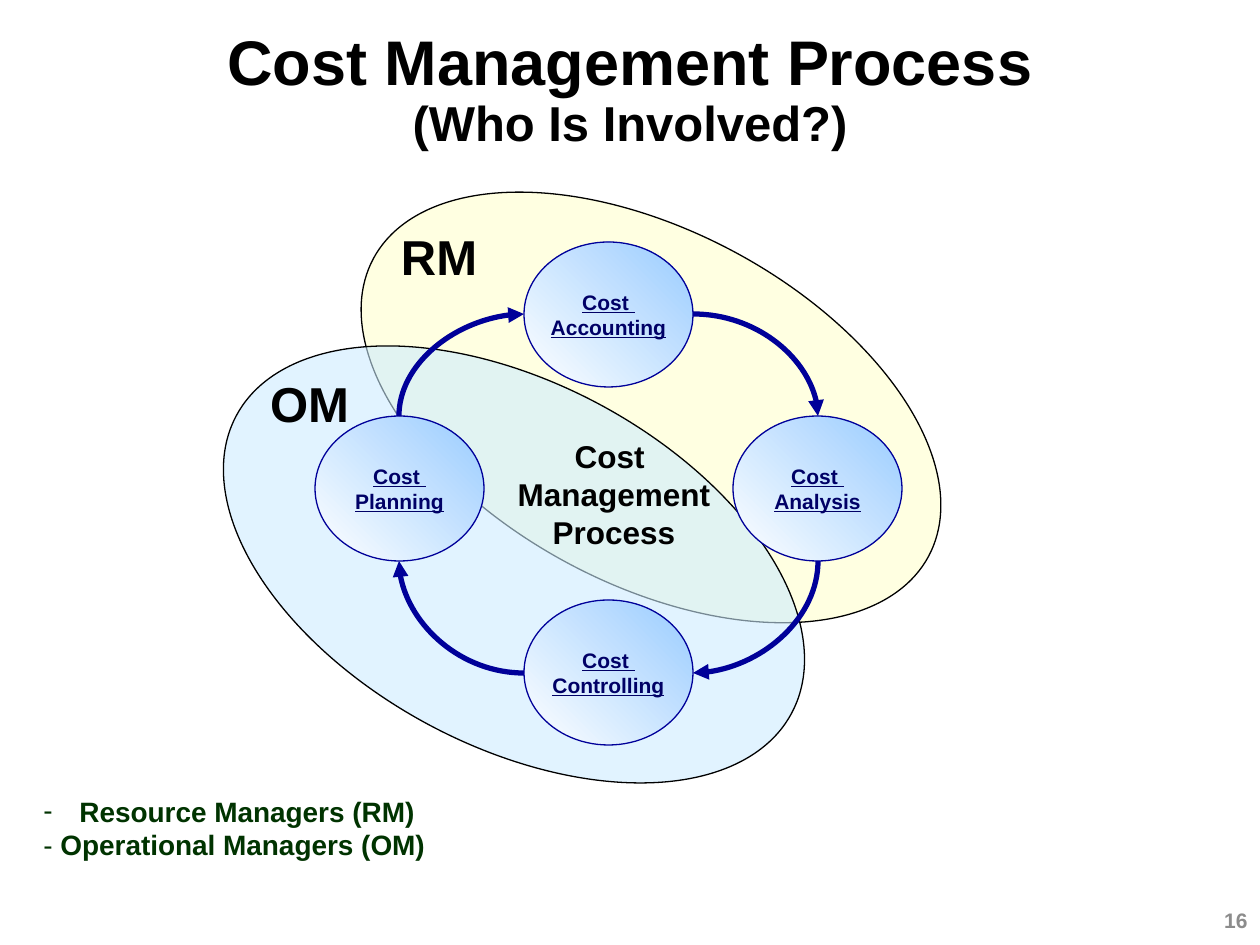
from dataclasses import dataclass

from lxml.etree import SubElement
from pptx import Presentation
from pptx.dml.color import RGBColor
from pptx.enum.shapes import MSO_CONNECTOR, MSO_SHAPE
from pptx.enum.text import MSO_ANCHOR as Anchor, MSO_AUTO_SIZE as AutoSize, PP_ALIGN as Align
from pptx.oxml.ns import qn
from pptx.util import Pt

EMU_PER_PX = 914400 / 126


@dataclass(frozen=True)
class Theme:
    font: str = "Arial"
    black: str = "000000"
    rm_fill: str = "FFFFCC"
    om_fill: str = "CCECFF"
    step_from: str = "FFFFFF"
    step_to: str = "99CCFF"
    cycle_line: str = "000099"
    step_text: str = "000066"
    legend_text: str = "003300"
    page_text: str = "8C8C8C"
    title: int = 36
    heading: int = 28
    hub: int = 18
    legend: int = 16
    small: int = 12


theme = Theme()


def px(*lengths):
    """Convert px lengths to a list of EMU."""
    return [round(length * EMU_PER_PX) for length in lengths]


def add_run(paragraph, text, size, color, bold=True, underline=None):
    run = paragraph.add_run()
    run.text = text
    font = run.font
    font.name, font.size, font.bold, font.underline = theme.font, Pt(size), bold, underline
    font.color.rgb = RGBColor.from_string(color)


prs = Presentation()
prs.slide_width, prs.slide_height = px(1260, 945)
slide = prs.slides.add_slide(prs.slide_layouts[5])
shapes = slide.shapes

# Title
title = shapes.title
title.left, title.top, title.width, title.height = px(168, 31, 924, 78)
frame = title.text_frame
frame.word_wrap = True
frame.auto_size = AutoSize.NONE
frame.vertical_anchor = Anchor.TOP
frame.margin_top = frame.margin_bottom = 0
heading = frame.paragraphs[0]
heading.alignment = Align.CENTER
heading.line_spacing = 0.9
add_run(heading, "Cost Management Process", theme.title, theme.black)
heading.add_line_break()
add_run(heading, "(Who Is Involved?)", theme.heading, theme.black)

# Overlapping areas of responsibility
areas = [
    ("RM", theme.rm_fill, (336, 231, 630, 353), (388, 220, 102, 72)),
    ("OM", theme.om_fill, (199, 383, 630, 363), (257, 367, 105, 72)),
]
for role, color, area_box, role_box in areas:
    area = shapes.add_shape(MSO_SHAPE.OVAL, *px(*area_box))
    area.rotation = 28.2
    area.shadow.inherit = False
    area.fill.solid()
    area.fill.fore_color.rgb = RGBColor.from_string(color)
    area_color = area.fill._xPr.find(qn("a:solidFill"))[0]
    SubElement(area_color, qn("a:alpha"), val="58000")
    area.line.color.rgb = RGBColor.from_string(theme.black)
    area.line.width = Pt(0.75)

    frame = shapes.add_textbox(*px(*role_box)).text_frame
    frame.word_wrap = False
    frame.auto_size = AutoSize.SHAPE_TO_FIT_TEXT
    frame.paragraphs[0].alignment = Align.CENTER
    add_run(frame.paragraphs[0], role, theme.heading, theme.black)

# Legend
frame = shapes.add_textbox(*px(31, 788, 408, 81)).text_frame
frame.word_wrap = False
frame.auto_size = AutoSize.SHAPE_TO_FIT_TEXT
resource, operational = frame.paragraphs[0], frame.add_paragraph()
bullet_props = resource._p.get_or_add_pPr()
indent = px(36)[0]
bullet_props.set("marL", str(indent))
bullet_props.set("indent", str(-indent))
SubElement(bullet_props, qn("a:buFont"), typeface=theme.font)
SubElement(bullet_props, qn("a:buChar"), char="-")
add_run(resource, "Resource Managers (RM)", theme.legend, theme.legend_text)
add_run(operational, "- ", theme.legend, theme.legend_text, bold=False)
add_run(operational, "Operational Managers (OM)", theme.legend, theme.legend_text)

# Steps of the cycle
STEP_W, STEP_H = 169, 145
steps = [
    ("Planning", 315, 416),
    ("Controlling", 524, 600),
    ("Analysis", 733, 416),
    ("Accounting", 524, 242),
]
for name, left, top in steps:
    step = shapes.add_shape(MSO_SHAPE.OVAL, *px(left, top, STEP_W, STEP_H))
    step.shadow.inherit = False
    step.fill.gradient()
    step.fill.gradient_angle = 45
    for stop, color in zip(step.fill.gradient_stops, (theme.step_from, theme.step_to)):
        stop.color.rgb = RGBColor.from_string(color)
    step.line.color.rgb = RGBColor.from_string(theme.cycle_line)
    step.line.width = Pt(0.75)
    frame = step.text_frame
    frame.word_wrap = False
    frame.vertical_anchor = Anchor.MIDDLE
    for paragraph, text in zip((frame.paragraphs[0], frame.add_paragraph()), ("Cost ", name)):
        paragraph.alignment = Align.CENTER
        add_run(paragraph, text, theme.small, theme.step_text, underline=True)

# Quarter-turn arrows: visible box and clockwise rotation
arrows = [
    ((399, 314, 125, 102), 270),
    ((693, 314, 125, 102), 0),
    ((693, 561, 125, 112), 90),
    ((399, 561, 125, 112), 180),
]
for (left, top, width, height), turn in arrows:
    center_x, center_y = left + width / 2, top + height / 2
    if turn in (90, 270):
        width, height = height, width
    left, top = center_x - width / 2, center_y - height / 2
    arrow = shapes.add_connector(MSO_CONNECTOR.CURVE, *px(left, top, left + width, top + height))
    arrow.line.color.rgb = RGBColor.from_string(theme.cycle_line)
    arrow.line.width = Pt(3)
    props = arrow._element.spPr
    props.find(qn("a:xfrm")).set("rot", str(turn * 60000))
    props.find(qn("a:prstGeom")).set("prst", "curvedConnector2")
    SubElement(props.find(qn("a:ln")), qn("a:tailEnd"), type="triangle")
    SubElement(props, qn("a:effectLst"))

# Hub of the cycle
frame = shapes.add_textbox(*px(505, 431, 218, 126)).text_frame
frame.word_wrap = False
frame.auto_size = AutoSize.SHAPE_TO_FIT_TEXT
for index, text in enumerate(("Cost ", "Management", "Process")):
    paragraph = frame.add_paragraph() if index else frame.paragraphs[0]
    paragraph.alignment = Align.CENTER
    add_run(paragraph, text, theme.hub, theme.black)

# Page number
frame = shapes.add_textbox(*px(1187, 895, 73, 50)).text_frame
frame.word_wrap = True
frame.vertical_anchor = Anchor.MIDDLE
frame.paragraphs[0].alignment = Align.RIGHT
add_run(frame.paragraphs[0], "16", theme.small, theme.page_text)

prs.save("out.pptx")
